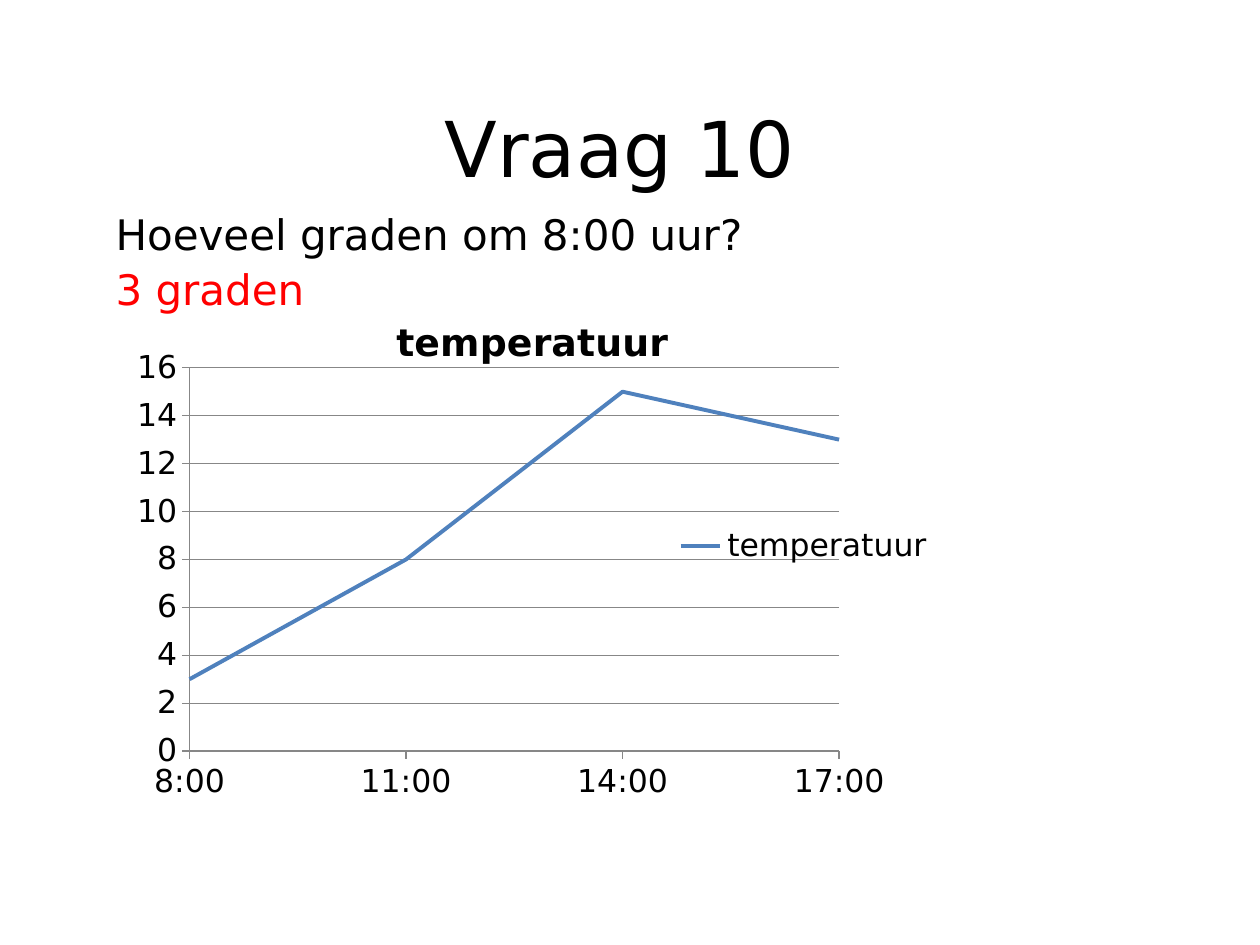
from lxml import etree
from pptx import Presentation
from pptx import util as u
from pptx.chart.data import CategoryChartData
from pptx.dml.color import RGBColor
from pptx.enum import chart as charts, shapes, text
from pptx.oxml.ns import qn

FONT = "DejaVu Sans"
BLACK, WHITE, RED, GREY, BLUE = "000000", "FFFFFF", "FF0000", "878787", "4F81BD"


def color(hex_string):
    """Turn a hex string into a colour."""
    return RGBColor.from_string(hex_string)


def style_font(font, size, hex_string, bold=False):
    """Set the typeface, size, colour and weight of a font."""
    font.name = FONT
    font.size = u.Pt(size)
    font.bold = bold
    font.color.rgb = color(hex_string)


def add_span(para, words, size, hex_string, bold=False):
    """Add one styled run to a paragraph."""
    span = para.add_run()
    span.text = words
    style_font(span.font, size, hex_string, bold)


def add_title(page, words):
    """Add the centred slide title."""
    box = page.shapes.add_textbox(u.Cm(1.7), u.Cm(0.91), u.Cm(21.59), u.Cm(4.09))
    frame = box.text_frame
    frame.word_wrap = True
    frame.vertical_anchor = text.MSO_ANCHOR.MIDDLE
    para = frame.paragraphs[0]
    para.alignment = text.PP_ALIGN.CENTER
    add_span(para, words, 44, BLACK)


def add_question_panel(page, lines):
    """Add the translucent panel with the question and its answer."""
    panel = page.shapes.add_shape(
        shapes.MSO_SHAPE.RECTANGLE, u.Cm(1.09), u.Cm(4.19), u.Cm(22.61), u.Cm(12.75))
    panel.shadow.inherit = False
    panel.line.fill.background()
    panel.fill.solid()
    panel.fill.fore_color.rgb = color(WHITE)
    fill_color = panel._element.spPr.find(qn("a:solidFill"))[0]
    etree.SubElement(fill_color, qn("a:alpha")).set("val", "76000")
    frame = panel.text_frame
    frame.word_wrap = True
    frame.vertical_anchor = text.MSO_ANCHOR.TOP
    for index, (words, hex_string) in enumerate(lines):
        para = frame.add_paragraph() if index else frame.paragraphs[0]
        para.alignment = text.PP_ALIGN.LEFT
        para.line_spacing = 0.9
        para.space_before = u.Pt(5.6 if index else 0)
        properties = para._p.get_or_add_pPr()
        properties.set("marL", str(u.Cm(0.53)))
        properties.set("indent", str(u.Cm(0.46)))
        add_span(para, words, 24, hex_string)


def set_layout(parent, position, target=None, **fractions):
    """Place a chart part by fractions of the chart area."""
    for old in parent.findall(qn("c:layout")):
        parent.remove(old)
    layout = etree.Element(qn("c:layout"))
    parent.insert(position, layout)
    manual = etree.SubElement(layout, qn("c:manualLayout"))
    if target:
        etree.SubElement(manual, qn("c:layoutTarget")).set("val", target)
    for name in ("x", "y"):
        etree.SubElement(manual, qn(f"c:{name}Mode")).set("val", "edge")
    for name, value in fractions.items():
        etree.SubElement(manual, qn(f"c:{name}")).set("val", str(value))


def start_line_on_axis(value_axis):
    """Let the first category fall on the value axis."""
    element = value_axis._element
    for old in element.findall(qn("c:crossBetween")):
        element.remove(old)
    between = etree.Element(qn("c:crossBetween"))
    between.set("val", "midCat")
    element.find(qn("c:crosses")).addnext(between)


def style_line(line, hex_string, width):
    """Set the colour and width of a line."""
    line.color.rgb = color(hex_string)
    line.width = u.Pt(width)


def add_temperature_chart(page, name, readings):
    """Add the line chart of temperature by time of day."""
    data = CategoryChartData()
    data.categories = list(readings)
    data.add_series(name, list(readings.values()))
    chart = page.shapes.add_chart(
        charts.XL_CHART_TYPE.LINE, u.Cm(2.31), u.Cm(5.72),
        u.Cm(16.79), u.Cm(10.59), data).chart
    style_font(chart.font, 18, BLACK)

    chart.has_title = True
    title = chart.chart_title
    add_span(title.text_frame.paragraphs[0], name, 21.6, BLACK, bold=True)
    set_layout(title._element, 1, x=0.33, y=0.05)

    chart.has_legend = True
    chart.legend.position = charts.XL_LEGEND_POSITION.RIGHT
    chart.legend.include_in_layout = False
    style_font(chart.legend.font, 18, BLACK)

    for axis in (chart.category_axis, chart.value_axis):
        axis.major_tick_mark = charts.XL_TICK_MARK.OUTSIDE
        axis.minor_tick_mark = charts.XL_TICK_MARK.NONE
        style_line(axis.format.line, GREY, 0.75)
        style_font(axis.tick_labels.font, 18, BLACK)
    values = chart.value_axis
    values.minimum_scale, values.maximum_scale, values.major_unit = 0, 16, 2
    values.has_major_gridlines = True
    style_line(values.major_gridlines.format.line, GREY, 0.75)
    start_line_on_axis(values)

    plot = chart.plots[0]
    plot.vary_by_categories = False
    series = plot.series[0]
    series.smooth = False
    series.marker.style = charts.XL_MARKER_STYLE.NONE
    style_line(series.format.line, BLUE, 2.25)
    plot_area = chart._chartSpace.chart.plotArea
    set_layout(plot_area, 0, "inner", x=0.09, y=0.16, w=0.78, h=0.73)


def main():
    """Build and save the slide."""
    deck = Presentation()
    deck.slide_width, deck.slide_height = u.Cm(25.4), u.Cm(19.05)
    page = deck.slides.add_slide(deck.slide_layouts[6])
    add_title(page, "Vraag 10")
    add_question_panel(page, [
        ("Hoeveel graden om 8:00 uur?", BLACK), ("3 graden", RED)])
    add_temperature_chart(page, "temperatuur", {
        "8:00": 3, "11:00": 8, "14:00": 15, "17:00": 13})
    deck.save("out.pptx")


if __name__ == "__main__":
    main()
